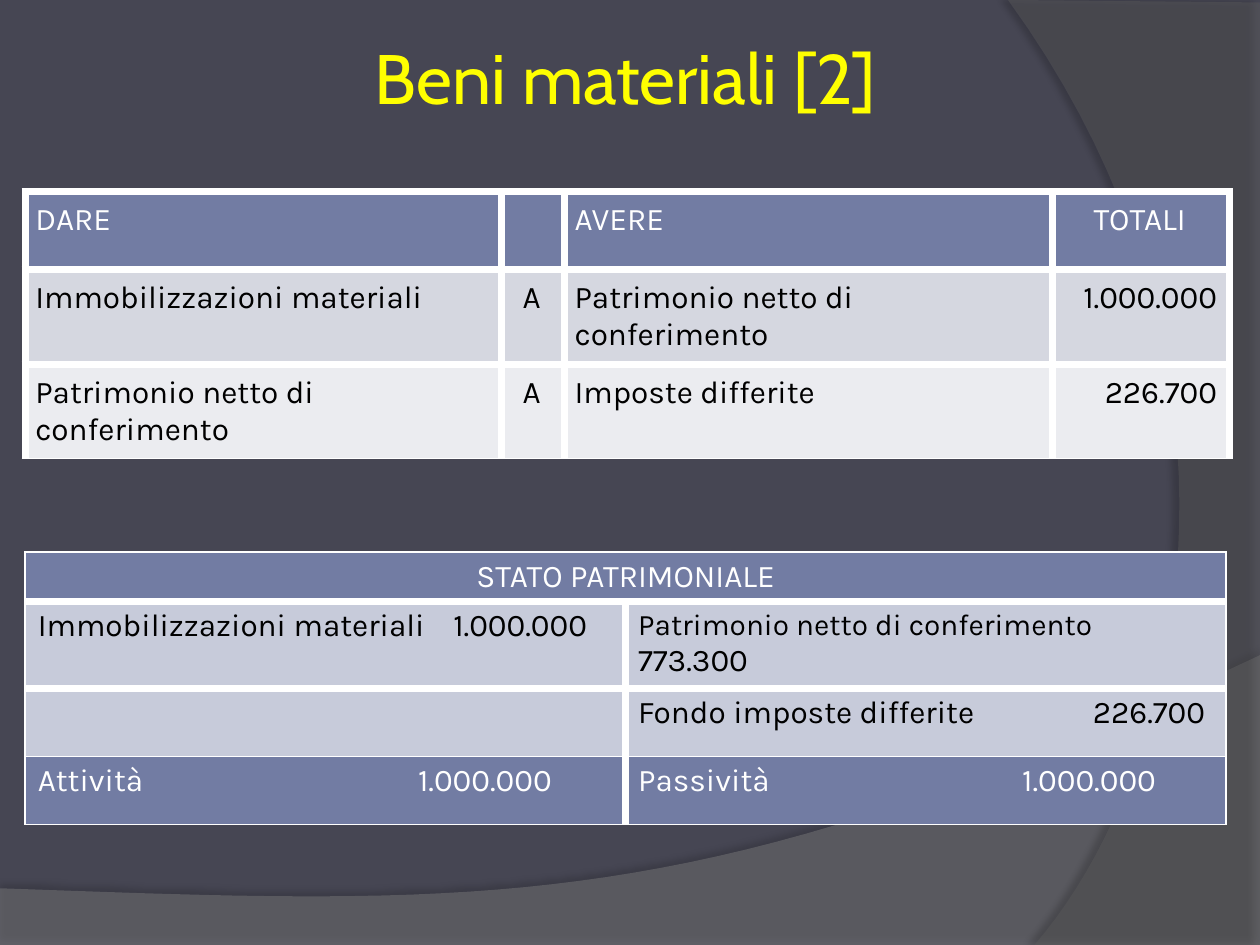
from lxml import etree
from pptx import Presentation
from pptx import util as u
from pptx.dml.color import RGBColor
from pptx.enum import text
from pptx.oxml import ns

deck = Presentation()
deck.slide_width, deck.slide_height = u.Inches(10), u.Inches(7.5)
unit = deck.slide_width / 100
slide = deck.slides.add_slide(deck.slide_layouts[5])
hue = RGBColor.from_string
LEFT, MID, RIGHT = text.PP_ALIGN.LEFT, text.PP_ALIGN.CENTER, text.PP_ALIGN.RIGHT
BLUE, WHITE, BLACK = "727CA3", "FFFFFF", "000000"


def node(root, tag, **attrs):
    return etree.SubElement(root, ns.qn("a:" + tag), {k: str(v) for k, v in attrs.items()})


def grid(place, cols, rows, data, fills, inks, aligns, vlines, hlines, pads, tabs):
    area = [round(n * unit) for n in (*place, sum(cols), sum(rows))]
    table = slide.shapes.add_table(len(rows), len(cols), *area).table
    table.first_row = table.horz_banding = False
    for col, wide in zip(table.columns, cols):
        col.width = round(wide * unit)
    for row, high in zip(table.rows, rows):
        row.height = round(high * unit)
    if len(data[0]) < len(cols):
        table.cell(0, 0).merge(table.cell(0, len(cols) - 1))
    for r in range(len(rows)):
        for c in range(len(cols)):
            cell = table.cell(r, c)
            cell.margin_left, cell.margin_top, cell.margin_right, cell.margin_bottom = [
                round(p * unit) for p in pads]
            last = -1 if cell.is_merge_origin else c + 1
            props = cell._tc.get_or_add_tcPr()
            sides = {"L": vlines[c], "R": vlines[last], "T": hlines[r], "B": hlines[r + 1]}
            for side, thick in sides.items():
                line = node(props, "ln" + side, w=u.Pt(thick))
                node(node(line, "solidFill"), "srgbClr", val=WHITE)
            cell.fill.solid()
            cell.fill.fore_color.rgb = hue(fills[r])
            if c >= len(data[r]):
                continue
            para = cell.text_frame.paragraphs[0]
            para.alignment = aligns[r][c]
            para.font.size = u.Pt(18)
            if (r, c) in tabs:
                stops = etree.Element(ns.qn("a:tabLst"))
                node(stops, "tab", pos=round(tabs[r, c] * unit), algn="r")
                para._p.get_or_add_pPr().insert(0, stops)
            for words in data[r][c]:
                if words.startswith("\n"):
                    para.add_line_break()
                run = para.add_run()
                run.text = words.strip("\n")
                run.font.size, run.font.name = u.Pt(18), "Karla"
                run.font.color.rgb = hue(inks[r])
    return table


waves = [
    ([(0, 70.5), (0, 75), (100, 75), (100, 52)],
     [(100, 52), (55.9, 72.9), (39.1, 71.9), (0, 70.5)], "7F7F7F", 45, (35, 3.5, 270)),
    ([(100, 0.2), (100, 75), (82.1, 75)],
     [(82.1, 75), (93.5, 61.9), (101.8, 30), (80, 0)], "5E5E5E", 40, (45, 4, 180)),
]
for edge, curve, shade, clear, (dark, far, turn) in waves:
    steps = [n / 40 for n in range(1, 41)]
    bend = [tuple((1 - t) ** 3 * a + 3 * (1 - t) ** 2 * t * b + 3 * (1 - t) * t * t * c + t ** 3 * d
                  for a, b, c, d in zip(*curve)) for t in steps]
    spots = [(round(x * unit), round(y * unit)) for x, y in edge + bend]
    pen = slide.shapes.build_freeform(*spots[0])
    pen.add_line_segments(spots[1:])
    wave = pen.convert_to_shape()
    wave.fill.solid()
    wave.fill.fore_color.rgb = hue(shade)
    wave.line.fill.background()
    wave.shadow.inherit = False
    props = wave._element.spPr
    node(props.find(".//" + ns.qn("a:srgbClr")), "alpha", val=clear * 1000)
    glow = node(props.find(ns.qn("a:effectLst")), "outerShdw", blurRad=u.Pt(4),
                dist=u.Pt(far), dir=turn * 60000, rotWithShape=0)
    node(node(glow, "srgbClr", val=BLACK), "alpha", val=dark * 1000)

slide.background.fill.solid()
slide.background.fill.fore_color.rgb = hue("464653")

title = slide.shapes.title
slide.shapes._spTree.append(title._element)
title.left, title.top, title.width, title.height = [round(n * unit) for n in (2, 2.9, 95.3, 6.3)]
frame = title.text_frame
frame.margin_left = frame.margin_right = frame.margin_top = frame.margin_bottom = round(unit / 2)
frame.vertical_anchor = text.MSO_ANCHOR.MIDDLE
para = frame.paragraphs[0]
para.alignment = MID
run = para.add_run()
run.text = "Beni materiali [2]"
run.font.size, run.font.name = u.Pt(40), "Cabin"
run.font.color.rgb = hue("FFFF00")

sheet = grid(
    (2, 43.8), [47.65] * 2, [3.9, 6.9, 5.4, 5.4],
    [[["STATO PATRIMONIALE"]],
     [["Immobilizzazioni materiali", "\t1.000.000"],
      ["Patrimonio netto di conferimento", "\n773.300"]],
     [[], ["Fondo imposte differite", "\t226.700"]],
     [["Attività", "\t1.000.000"], ["Passività", "\t1.000.000"]]],
    [BLUE, "C7CBDA", "C7CBDA", BLUE], [WHITE, BLACK, BLACK, WHITE],
    [[MID]] + [[LEFT] * 2] * 3, [1, 4.5, 1], [1, 4.5, 4.5, 1, 1], (1, 0.5, 1, 0.5),
    {(1, 0): 43.6, (2, 1): 45, (3, 0): 40.8, (3, 1): 41.1})
sheet.cell(1, 1).text_frame.paragraphs[0].runs[0].font.size = u.Pt(17)

grid(
    (2, 15.2), [37.8, 5, 38.7, 14.1], [6.2, 7.5, 7.5],
    [[["DARE"], [], ["AVERE"], ["TOTALI"]],
     [["Immobilizzazioni materiali"], ["A"], ["Patrimonio netto di conferimento"], ["1.000.000"]],
     [["Patrimonio netto di conferimento"], ["A"], ["Imposte differite"], ["226.700"]]],
    [BLUE, "D5D7E0", "EBECF0"], [WHITE, BLACK, BLACK],
    [[LEFT, MID, LEFT, MID]] + [[LEFT, MID, LEFT, RIGHT]] * 2,
    [4.5] * 5, [4.5, 4.5, 4.5, 1], (0.8, 0.8, 1, 0.8), {})

deck.save("out.pptx")
